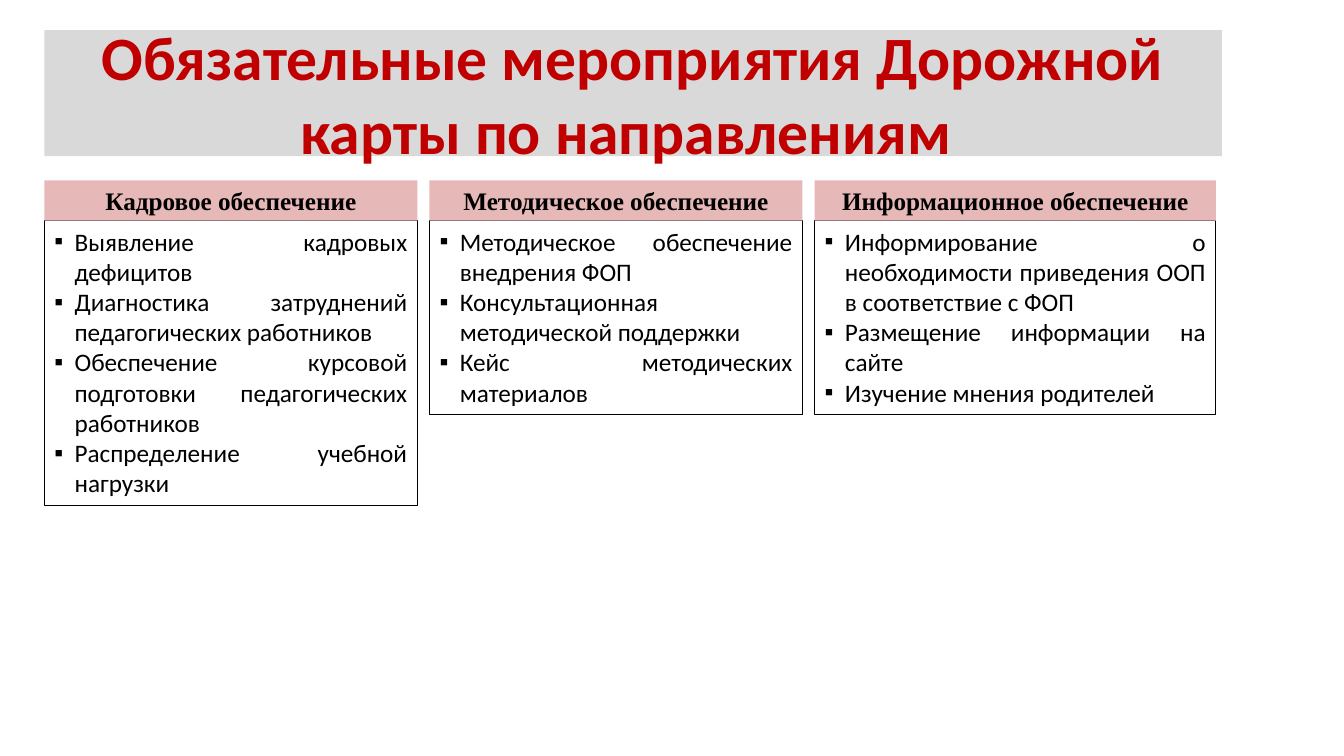
from dataclasses import dataclass

from lxml.etree import SubElement
from pptx import Presentation
from pptx.dml.color import RGBColor
from pptx.enum.text import MSO_ANCHOR as Anchor, MSO_AUTO_SIZE as AutoSize, PP_ALIGN as Align
from pptx.oxml.ns import qn
from pptx.util import Inches, Pt

# Grid, in inches
LEFT, GAP = 0.44, 0.12
TITLE_TOP, TITLE_WIDTH, TITLE_HEIGHT = 0.3, 11.68, 1.25
HEADER_TOP, HEADER_HEIGHT = 1.79, 0.4
LINE_HEIGHT, PADDING = 0.303, 0.1
BULLET_INDENT = 0.2
COMPARISON_LAYOUT = 4


@dataclass
class Direction:
    header: str
    width: float
    lines: int
    measures: list[str]


DIRECTIONS = [
    Direction("Кадровое обеспечение", 3.7, 9, [
        "Выявление кадровых дефицитов",
        "Диагностика затруднений педагогических работников",
        "Обеспечение курсовой подготовки педагогических работников",
        "Распределение учебной нагрузки",
    ]),
    Direction("Методическое обеспечение", 3.7, 6, [
        "Методическое обеспечение внедрения ФОП",
        "Консультационная методической поддержки",
        "Кейс методических материалов",
    ]),
    Direction("Информационное обеспечение", 3.98, 6, [
        "Информирование о необходимости приведения ООП в соответствие с ФОП",
        "Размещение информации на сайте",
        "Изучение мнения родителей",
    ]),
]


def color(value: str) -> RGBColor:
    return RGBColor.from_string(value)


TITLE_FONT = {"name": "Calibri", "size": Pt(44), "bold": True, "color": "C00000"}
HEADER_FONT = {"name": "Times New Roman", "size": Pt(18), "bold": True, "color": "000000"}
LIST_FONT = {"name": "Calibri", "size": Pt(18), "bold": False, "color": "000000"}


def place(shape, left: float, top: float, width: float, height: float) -> None:
    box = {"left": left, "top": top, "width": width, "height": height}
    for name, value in box.items():
        setattr(shape, name, Inches(value))


def fill_with(shape, value: str) -> None:
    shape.fill.solid()
    shape.fill.fore_color.rgb = color(value)


def write(shape, texts: list[str], font_format: dict, alignment: Align, anchor: Anchor) -> None:
    frame = shape.text_frame
    frame.word_wrap = True
    frame.auto_size = AutoSize.NONE
    frame.vertical_anchor = anchor
    frame.text = "\n".join(texts)
    for paragraph in frame.paragraphs:
        paragraph.alignment = alignment
        paragraph.space_before = Pt(0)
        font = paragraph.runs[0].font
        for name, value in font_format.items():
            if name == "color":
                font.color.rgb = color(value)
            else:
                setattr(font, name, value)


def add_bullets(shape) -> None:
    for paragraph in shape.text_frame.paragraphs:
        properties = paragraph._p.get_or_add_pPr()
        properties.set("marL", str(Inches(BULLET_INDENT)))
        properties.set("indent", str(-Inches(BULLET_INDENT)))
        SubElement(properties, qn("a:buChar")).set("char", "▪")


def draw_direction(slide, body, direction: Direction, left: float) -> None:
    # Column header
    header = slide.shapes.add_textbox(0, 0, 0, 0)
    place(header, left, HEADER_TOP, direction.width, HEADER_HEIGHT)
    fill_with(header, "E6B9B8")
    write(header, [direction.header], HEADER_FONT, Align.CENTER, Anchor.TOP)

    # Bulleted list, as tall as its lines
    height = PADDING + LINE_HEIGHT * direction.lines
    place(body, left, HEADER_TOP + HEADER_HEIGHT, direction.width, height)
    body.line.color.rgb = color("000000")
    body.line.width = Pt(0.75)
    write(body, direction.measures, LIST_FONT, Align.JUSTIFY, Anchor.TOP)
    add_bullets(body)


def main() -> None:
    presentation = Presentation()
    presentation.slide_width = Inches(13.33)
    presentation.slide_height = Inches(7.5)
    slide = presentation.slides.add_slide(presentation.slide_layouts[COMPARISON_LAYOUT])

    # Title
    title, *bodies = slide.placeholders
    place(title, LEFT, TITLE_TOP, TITLE_WIDTH, TITLE_HEIGHT)
    fill_with(title, "D9D9D9")
    write(title, ["Обязательные мероприятия Дорожной карты по направлениям "],
          TITLE_FONT, Align.CENTER, Anchor.MIDDLE)

    # Columns, left to right
    left = LEFT
    for direction, body in zip(DIRECTIONS, bodies):
        draw_direction(slide, body, direction, left)
        left += direction.width + GAP

    # Unused placeholders
    for body in bodies[len(DIRECTIONS):]:
        body.element.getparent().remove(body.element)

    presentation.save("out.pptx")


if __name__ == "__main__":
    main()
